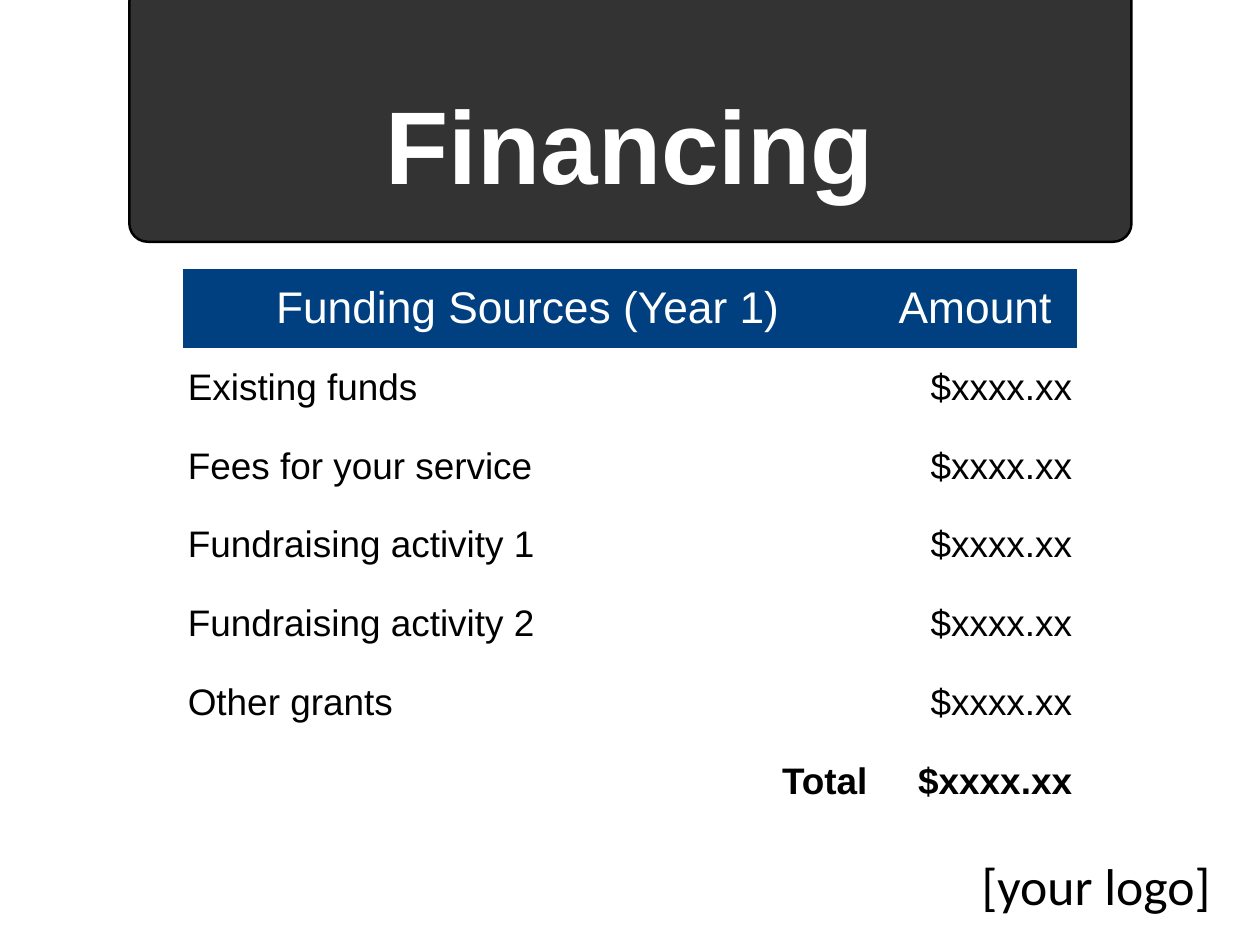
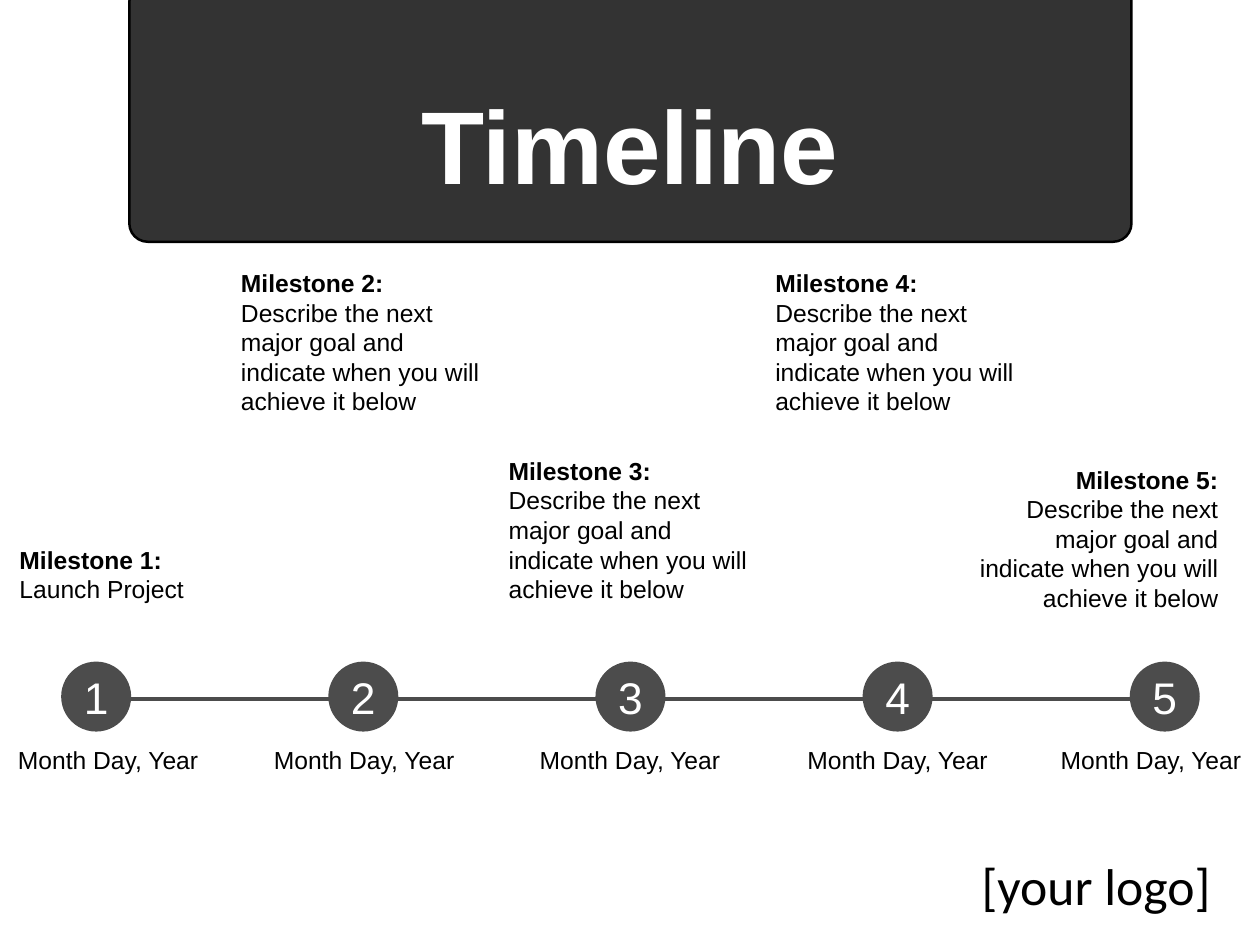
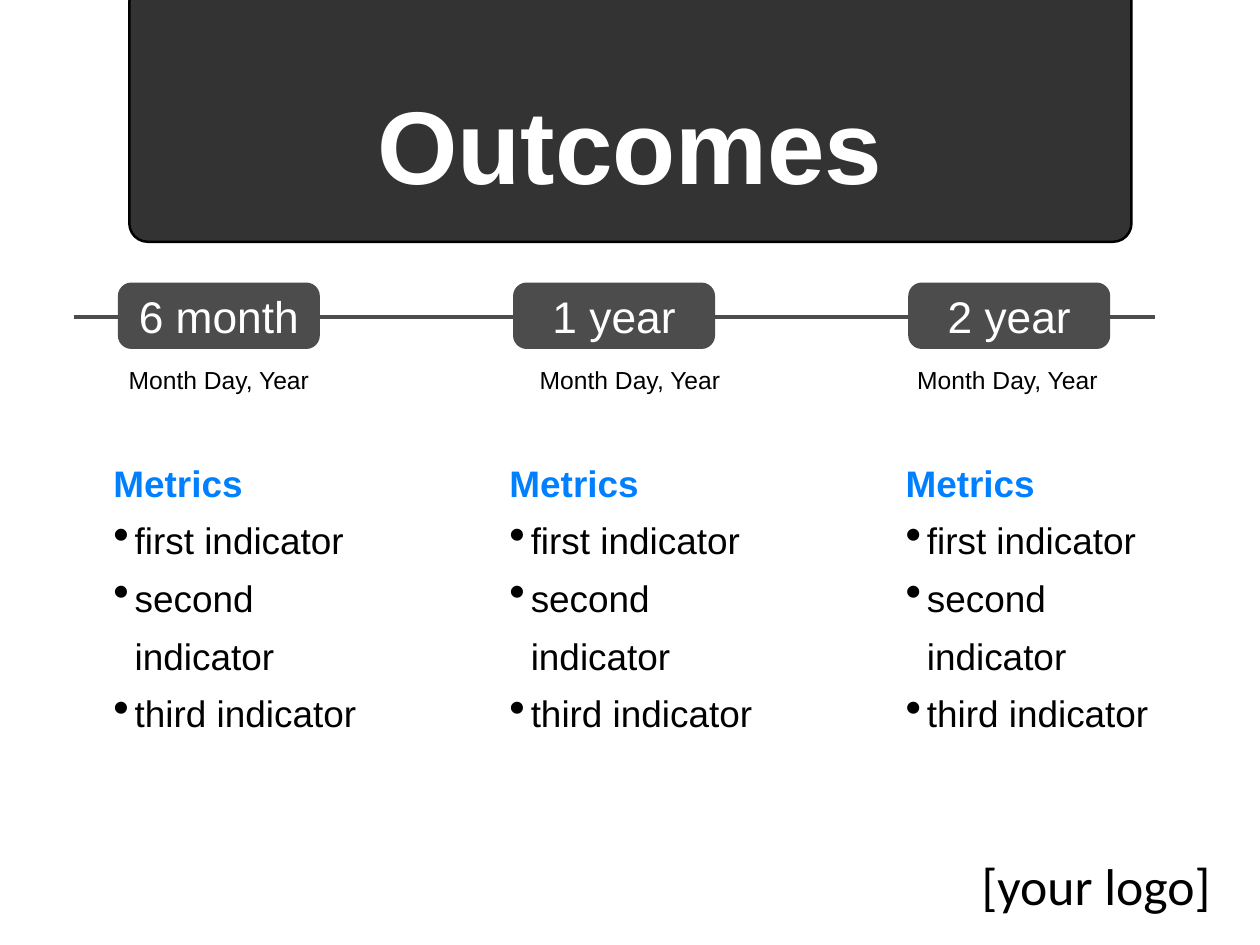
from lxml.etree import SubElement
from pptx import Presentation
from pptx.dml.color import RGBColor
from pptx.enum.shapes import MSO_CONNECTOR as Link, MSO_SHAPE as Preset
from pptx.enum.text import MSO_ANCHOR as Anchor, MSO_AUTO_SIZE as AutoSize, PP_ALIGN as Align
from pptx.oxml.ns import qn
from pptx.util import Inches, Pt

# Shared style
BLACK, WHITE = "000000", "FFFFFF"
BAND, GREY, NAVY, BLUE = "333333", "4C4C4C", "004080", "0080FF"
NO_STYLE_NO_GRID = "{2D5ABB26-0587-4C30-8999-92F81FD0307C}"
LOGO_TEXT = "[your logo]"
DATE = "Month Day, Year"

# Financing content
FUNDING_HEADER = ("Funding Sources (Year 1)", "Amount")
FUNDING_SOURCES = ["Existing funds", "Fees for your service", "Fundraising activity 1",
                   "Fundraising activity 2", "Other grants"]
AMOUNT = "$xxxx.xx"
FUNDING_WIDTHS = (7.79, 2.31)
FUNDING_ROW_HEIGHT = 0.89

# Timeline content: description, left, top, height, alignment, left of the date
NEXT_GOAL = "Describe the next major goal and indicate when you will achieve it below"
MILESTONES = [
    ("Launch Project", 0.22, 6.09, 0.78, Align.LEFT, 0.14),
    (NEXT_GOAL, 2.72, 2.97, 1.78, Align.LEFT, 3.03),
    (NEXT_GOAL, 5.74, 5.09, 1.78, Align.LEFT, 6.03),
    (NEXT_GOAL, 8.75, 2.97, 1.78, Align.LEFT, 9.05),
    (NEXT_GOAL, 10.99, 5.19, 1.78, Align.RIGHT, 11.91),
]

# Outcomes content: period, left of the date
PERIODS = [("6 month", 1.39), ("1 year", 6.03), ("2 year", 10.29)]
METRICS = ["Metrics", "first indicator", "second indicator", "third indicator"]


def rgb(color):
    return RGBColor.from_string(color)


def add_bullet(para, indent=0.24):
    props = para._p.get_or_add_pPr()
    props.set("marL", str(Inches(indent)))
    props.set("indent", str(-Inches(indent)))
    SubElement(props, qn("a:buSzPct")).set("val", "125000")
    SubElement(props, qn("a:buChar")).set("char", "•")


def write(frame, *lines, size=20, color=BLACK, bold=False, font="Arial", align=Align.LEFT,
          heading=None, bullets=False, spacing=None):
    """Write one paragraph per line; heading is the colour of a bold first line."""
    for index, line in enumerate(lines):
        para = frame.paragraphs[0] if index == 0 else frame.add_paragraph()
        is_heading = heading is not None and index == 0
        para.alignment = align
        if spacing:
            para.line_spacing = spacing
        if bullets and not is_heading:
            add_bullet(para)
        run = para.add_run()
        run.text = line
        run.font.name, run.font.size = font, Pt(size)
        run.font.bold = bold or is_heading
        run.font.color.rgb = rgb(heading if is_heading else color)


def set_frame(frame, margin=0, wrap=True, fit=False):
    frame.margin_left = frame.margin_right = Inches(margin)
    frame.margin_top = frame.margin_bottom = Inches(margin)
    frame.vertical_anchor = Anchor.MIDDLE
    frame.word_wrap = wrap
    frame.auto_size = AutoSize.SHAPE_TO_FIT_TEXT if fit else AutoSize.NONE


def add_text(slide, box, *lines, label=False, **style):
    """A label keeps to one line and fits its box to the text."""
    frame = slide.shapes.add_textbox(*map(Inches, box)).text_frame
    set_frame(frame, wrap=not label, fit=label)
    write(frame, *lines, **style)


def add_block(slide, preset, box, fill, text=None, corner=None, outline=None):
    block = slide.shapes.add_shape(preset, *map(Inches, box))
    block.shadow.inherit = False
    block.fill.solid()
    block.fill.fore_color.rgb = rgb(fill)
    if corner is not None:
        block.adjustments[0] = corner
    if outline:
        block.line.color.rgb = rgb(outline)
        block.line.width = Pt(2)
    else:
        block.line.fill.background()
    if text:
        set_frame(block.text_frame)
        write(block.text_frame, text, size=36, color=WHITE, align=Align.CENTER)
    return block


def add_axis(slide, left, right, y):
    axis = slide.shapes.add_connector(Link.STRAIGHT, *map(Inches, (left, y, right, y)))
    axis.line.color.rgb = rgb(GREY)
    axis.line.width = Pt(3)
    SubElement(axis.element.spPr, qn("a:effectLst"))


def add_date(slide, left, top):
    add_text(slide, (left, top, 2.16, 0.43), DATE, label=True, align=Align.CENTER)


def add_slide(prs, heading):
    """Start a slide with the title on its dark band and the logo label."""
    slide = prs.slides.add_slide(prs.slide_layouts[5])
    title = slide.shapes.title
    title.left, title.top, title.width, title.height = map(Inches, (1.39, 0.28, 11.44, 2.67))
    set_frame(title.text_frame, margin=0.06)
    write(title.text_frame, heading, size=84, color=WHITE, bold=True, align=Align.CENTER)
    band = add_block(slide, Preset.ROUNDED_RECTANGLE, (1.46, -0.19, 11.31, 2.92), BAND,
                     corner=0.071, outline=BLACK)
    title.element.addprevious(band.element)
    add_text(slide, (10.98, 9.6, 2.78, 0.79), LOGO_TEXT, label=True, size=42,
             font="Calibri", align=Align.CENTER)
    return slide


def build_financing(prs):
    slide = add_slide(prs, "Financing")
    rows = [FUNDING_HEADER, *((source, AMOUNT) for source in FUNDING_SOURCES), ("Total", AMOUNT)]
    last = len(rows) - 1
    holder = slide.shapes.add_table(
        len(rows), len(FUNDING_WIDTHS), Inches(2.06), Inches(3.04),
        Inches(sum(FUNDING_WIDTHS)), Inches(FUNDING_ROW_HEIGHT * len(rows)))
    funding = holder.table
    funding.first_row = funding.horz_banding = False
    next(holder.element.iter(qn("a:tableStyleId"))).text = NO_STYLE_NO_GRID
    for column, width in zip(funding.columns, FUNDING_WIDTHS):
        column.width = Inches(width)

    for r, row in enumerate(rows):
        funding.rows[r].height = Inches(FUNDING_ROW_HEIGHT)
        for c, text in enumerate(row):
            cell = funding.cell(r, c)
            cell.margin_left = cell.margin_right = Inches(0.06)
            cell.margin_top = cell.margin_bottom = Inches(0.06)
            cell.vertical_anchor = Anchor.MIDDLE
            if r == 0:
                cell.fill.solid()
                cell.fill.fore_color.rgb = rgb(NAVY)
                write(cell.text_frame, text, size=36, color=WHITE, align=Align.CENTER)
            else:
                cell.fill.background()
                align = Align.RIGHT if c == 1 or r == last else Align.LEFT
                write(cell.text_frame, text, size=30, bold=r == last, align=align)


def build_timeline(prs):
    slide = add_slide(prs, "Timeline")
    add_axis(slide, 1.01, 13.21, 7.89)
    first, step, diameter = 0.69, 3.015, 0.79
    for i, (goal, left, top, height, align, date_left) in enumerate(MILESTONES):
        number = str(i + 1)
        add_block(slide, Preset.OVAL, (first + i * step, 7.47, diameter, diameter), GREY, number)
        add_date(slide, date_left, 8.36)
        add_text(slide, (left, top, 2.76, height), f"Milestone {number}:", goal,
                 heading=BLACK, align=align)


def build_outcomes(prs):
    slide = add_slide(prs, "Outcomes")
    add_axis(slide, 0.83, 13.03, 3.58)
    for i, (period, date_left) in enumerate(PERIODS):
        add_block(slide, Preset.ROUNDED_RECTANGLE, (1.33 + i * 4.46, 3.19, 2.28, 0.75), GREY,
                  period, corner=0.204)
        add_date(slide, date_left, 4.07)
        add_text(slide, (1.28 + i * 4.47, 5.07, 3.25, 3.21), *METRICS, size=30,
                 heading=BLUE, bullets=True, spacing=1.3)


def main():
    prs = Presentation()
    prs.slide_width, prs.slide_height = Inches(14.22), Inches(10.67)
    build_financing(prs)
    build_timeline(prs)
    build_outcomes(prs)
    prs.save("out.pptx")


if __name__ == "__main__":
    main()
